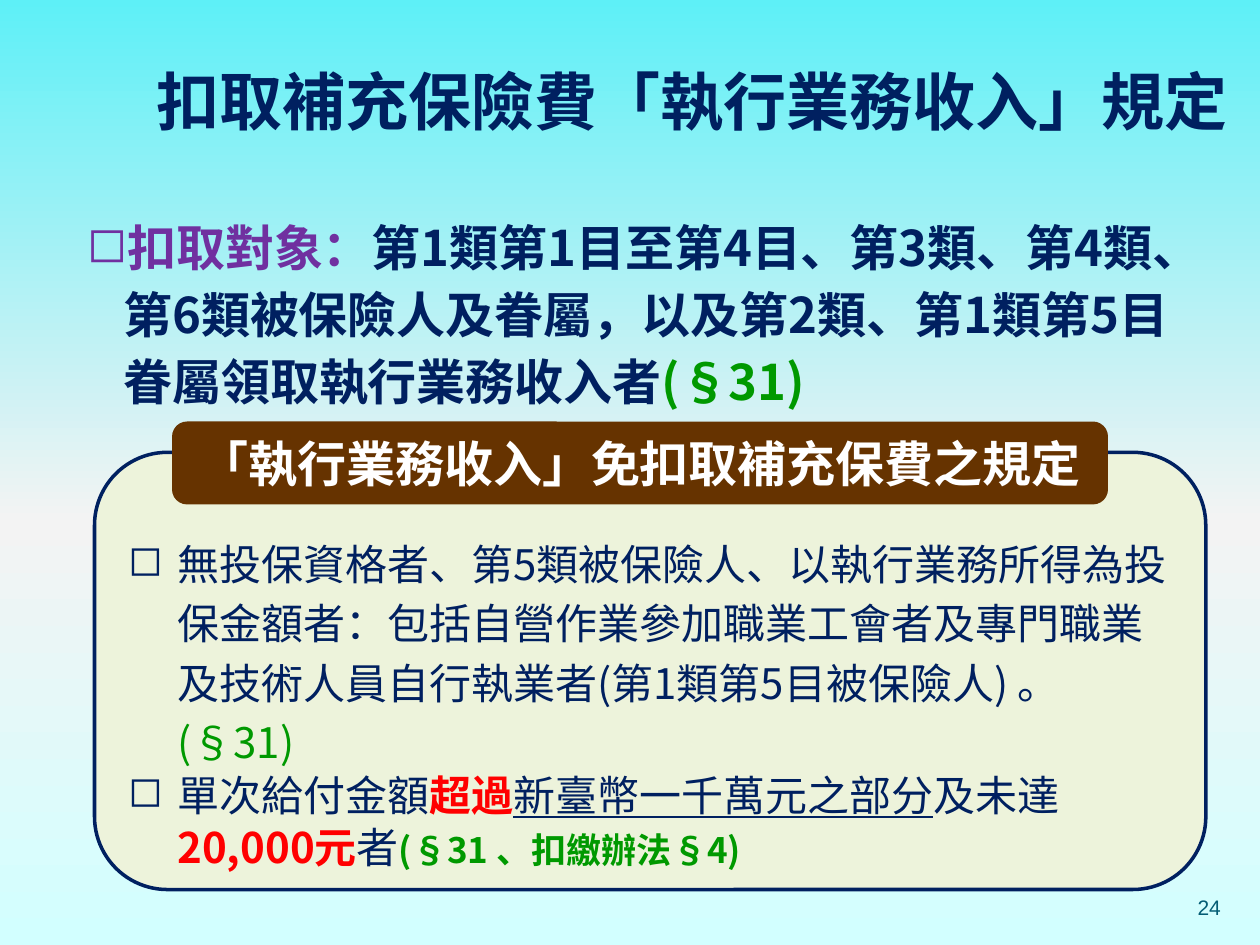
import pptx
import pptx.util
import pptx.dml.color
import pptx.enum.shapes
import pptx.enum.text
import pptx.oxml
import pptx.oxml.ns

Inches, Pt = pptx.util.Inches, pptx.util.Pt
ANCHOR = pptx.enum.text.MSO_ANCHOR
ALIGN = pptx.enum.text.PP_ALIGN
WIDTH, HEIGHT = 10, 7.5
CJK = "Noto Sans CJK SC"
COLORS = {
    "navy": "002060", "purple": "7030A0", "green": "009900", "red": "FF0000",
    "white": "FFFFFF", "brown": "663300", "cream": "EDF3DB", "teal": "045D75",
}
BACKGROUND = [(0, "5EF0F7"), (55, "F3F3F3"), (100, "D2FFFF")]

TITLE = [("扣取補充保險費「執行業務收入」規定", "navy", 36, "b")]
TARGETS = [
    ("扣取對象：", "purple", 28, "b"),
    ("第1類第1目至第4目、第3類、第4類、第6類被保險人及眷屬，以及第2類、第1類第5目眷屬領取執行業務收入者", "navy", 28, "b"),
    ("(§31)", "green", 28, "b"),
]
BANNER = [("「執行業務收入」免扣取補充保費之規定", "white", 28, "b")]
EXEMPT_PERSONS = [
    ("無投保資格者、第5類被保險人、以執行業務所得為投保金額者：包括自營作業參加職業工會者及專門職業及技術人員自行執業者(第1類第5目被保險人) 。 ", "navy", 24, ""),
    ("(§31)", "green", 24, ""),
]
EXEMPT_AMOUNTS = [
    ("單次給付金額", "navy", 24, ""),
    ("超過", "red", 24, "b"),
    ("新臺幣一千萬元之部分", "navy", 24, "u"),
    ("及未達", "navy", 24, ""),
    ("20,000元", "red", 24, "b"),
    ("者", "navy", 24, ""),
    ("(§31 、扣繳辦法§4)", "green", 20, "b"),
]
PAGE_NUMBER = [("24", "teal", 12, "")]


def rgb(name):
    return pptx.dml.color.RGBColor.from_string(COLORS[name])


def place(box):
    return [Inches(value) for value in box]


def paint_background(slide):
    fill = slide.background.fill
    fill.gradient()
    fill.gradient_angle = 270
    stops = fill.gradient_stops[0]._gs.getparent()
    for stop in list(stops):
        stops.remove(stop)
    for position, color in BACKGROUND:
        stop = pptx.oxml.parse_xml(
            f'<a:gs {pptx.oxml.ns.nsdecls("a")} pos="{position * 1000}">'
            f'<a:srgbClr val="{color}"/></a:gs>')
        stops.append(stop)


def add_bullet(paragraph, indent):
    properties = paragraph._p.get_or_add_pPr()
    properties.set("marL", str(Inches(indent)))
    properties.set("indent", str(-Inches(indent)))
    properties.append(pptx.oxml.parse_xml(
        f'<a:buChar {pptx.oxml.ns.nsdecls("a")} char="◻"/>'))


def write(shape, paragraphs, anchor, insets=(0.1, 0.05, 0.1, 0.05),
          align=ALIGN.LEFT, indent=0, font=CJK):
    frame = shape.text_frame
    frame.word_wrap = True
    frame.vertical_anchor = anchor
    (frame.margin_left, frame.margin_top,
     frame.margin_right, frame.margin_bottom) = place(insets)
    for index, (runs, spacing) in enumerate(paragraphs):
        paragraph = frame.add_paragraph() if index else frame.paragraphs[0]
        paragraph.alignment = align
        if spacing:
            paragraph.line_spacing = Pt(spacing)
        if indent:
            add_bullet(paragraph, indent)
        for text, color, size, style in runs:
            run = paragraph.add_run()
            run.text = text
            run.font.name = font
            run.font.size = Pt(size)
            run.font.color.rgb = rgb(color)
            run.font.bold = "b" in style
            run.font.underline = "u" in style
            run.font._element.append(pptx.oxml.parse_xml(
                f'<a:ea {pptx.oxml.ns.nsdecls("a")} typeface="{font}"/>'))


def add_panel(slide, box, fill, line):
    shape = slide.shapes.add_shape(
        pptx.enum.shapes.MSO_SHAPE.ROUNDED_RECTANGLE, *place(box))
    shape.shadow.inherit = False
    shape.fill.solid()
    shape.fill.fore_color.rgb = rgb(fill)
    shape.line.color.rgb = rgb(line)
    shape.line.width = Pt(2)
    return shape


def main():
    presentation = pptx.Presentation()
    presentation.slide_width = Inches(WIDTH)
    presentation.slide_height = Inches(HEIGHT)
    slide = presentation.slides.add_slide(presentation.slide_layouts[6])
    paint_background(slide)

    targets = slide.shapes.add_textbox(*place((0.59, 1.62, 8.98, 1.7)))
    write(targets, [(TARGETS, 38)], ANCHOR.TOP, indent=0.29)

    panel = add_panel(slide, (0.75, 3.59, 8.82, 3.47), "cream", "navy")
    write(panel, [(EXEMPT_PERSONS, 34), (EXEMPT_AMOUNTS, 30)], ANCHOR.TOP,
          insets=(0.1, 0.44, 0.1, 0), indent=0.39)

    banner = add_panel(slide, (1.38, 3.36, 7.4, 0.63), "brown", "brown")
    write(banner, [(BANNER, None)], ANCHOR.MIDDLE, align=ALIGN.CENTER)

    title = slide.shapes.add_textbox(*place((1.14, 0.36, 8.86, 0.87)))
    write(title, [(TITLE, None)], ANCHOR.MIDDLE)

    number = slide.shapes.add_textbox(*place((8.86, 6.9, 0.83, 0.4)))
    write(number, [(PAGE_NUMBER, None)], ANCHOR.BOTTOM, insets=(0, 0, 0, 0),
          align=ALIGN.RIGHT, font="Arial")

    presentation.save("out.pptx")


if __name__ == "__main__":
    main()
